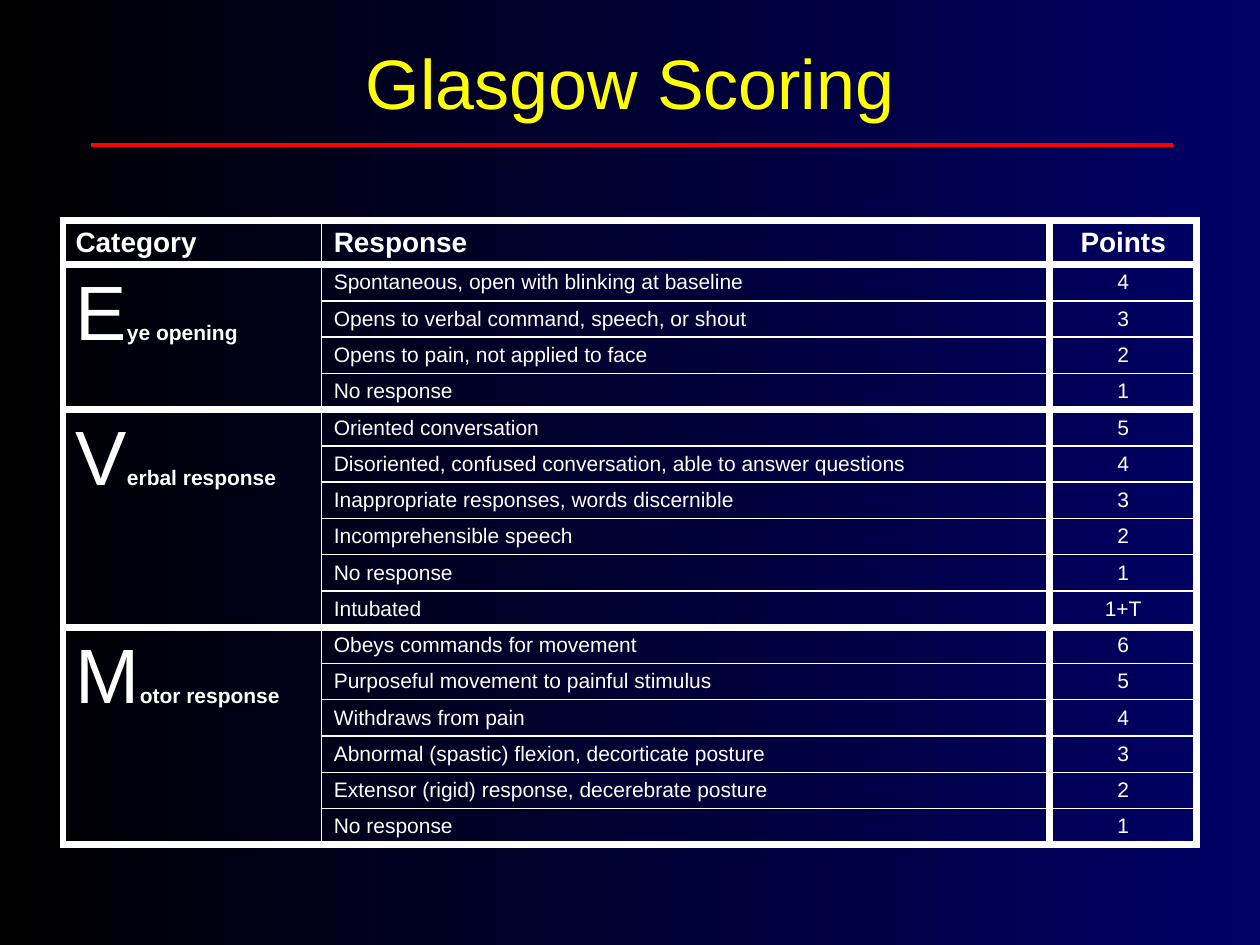
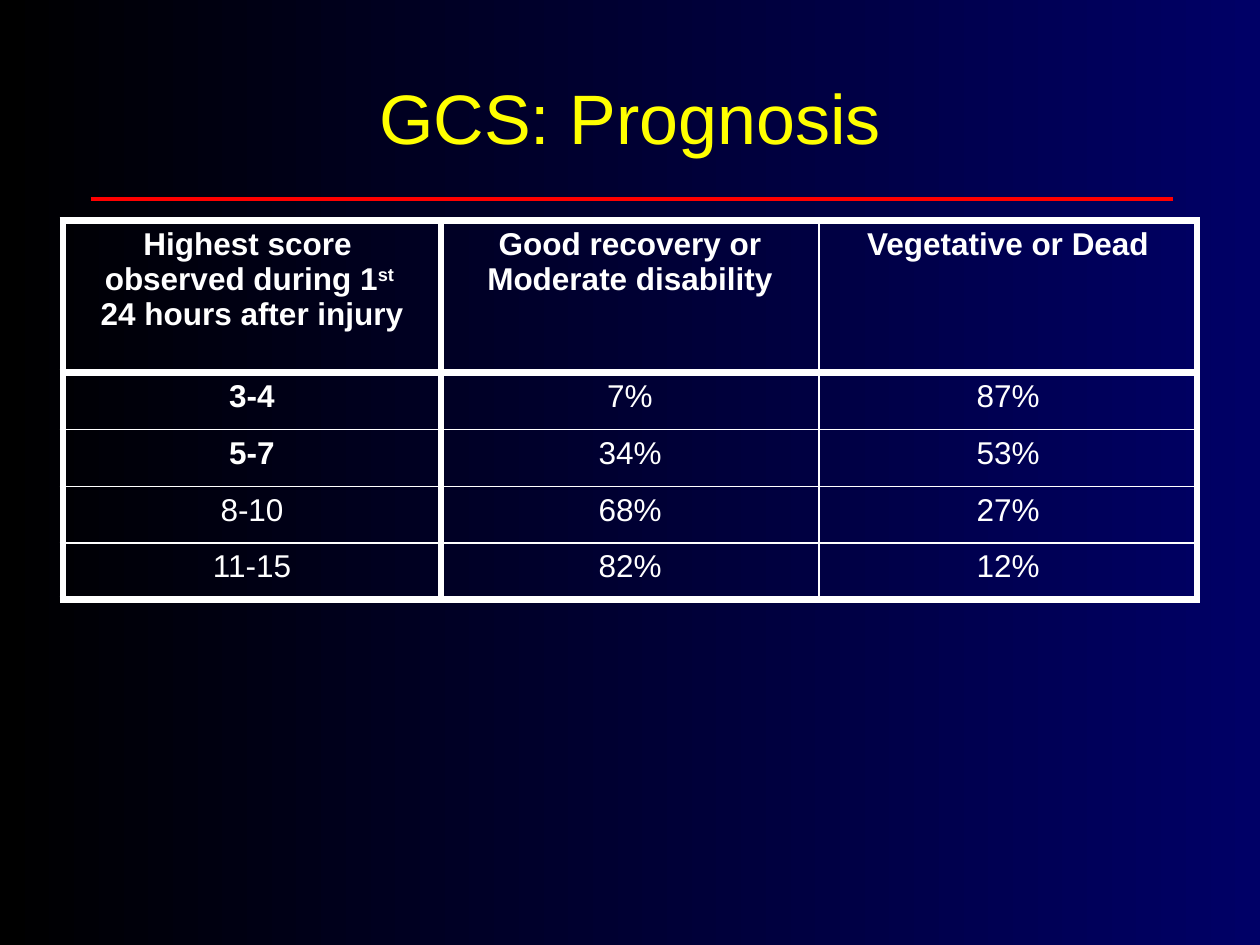
from lxml import etree
from pptx import Presentation
from pptx.dml.color import RGBColor
from pptx.enum.shapes import MSO_CONNECTOR
from pptx.enum.text import MSO_ANCHOR, PP_ALIGN
from pptx.oxml.ns import qn
from pptx.util import Inches, Pt

STRAIGHT = MSO_CONNECTOR.STRAIGHT
MIDDLE = MSO_ANCHOR.MIDDLE
LEFT, CENTER = PP_ALIGN.LEFT, PP_ALIGN.CENTER
BLACK = RGBColor(0x00, 0x00, 0x00)
NAVY = RGBColor(0x00, 0x00, 0x66)
YELLOW = RGBColor(0xFF, 0xFF, 0x00)
RED = RGBColor(0xFF, 0x00, 0x00)
WHITE = RGBColor(0xFF, 0xFF, 0xFF)
FONT = "Arial"
THIN, HEAVY = Pt(1), Pt(4.5)

SECTIONS = [
    ("Eye opening", [
        ("Spontaneous, open with blinking at baseline", "4"),
        ("Opens to verbal command, speech, or shout", "3"),
        ("Opens to pain, not applied to face", "2"),
        ("No response", "1"),
    ]),
    ("Verbal response", [
        ("Oriented conversation", "5"),
        ("Disoriented, confused conversation, able to answer questions", "4"),
        ("Inappropriate responses, words discernible", "3"),
        ("Incomprehensible speech", "2"),
        ("No response", "1"),
        ("Intubated", "1+T"),
    ]),
    ("Motor response", [
        ("Obeys commands for movement", "6"),
        ("Purposeful movement to painful stimulus", "5"),
        ("Withdraws from pain", "4"),
        ("Abnormal (spastic) flexion, decorticate posture", "3"),
        ("Extensor (rigid) response, decerebrate posture", "2"),
        ("No response", "1"),
    ]),
]
PROGNOSIS = [
    ("Highest score \nobserved during 1\n24 hours after injury",
     "Good recovery or\nModerate disability", "Vegetative or Dead"),
    ("3-4", "7%", "87%"),
    ("5-7", "34%", "53%"),
    ("8-10", "68%", "27%"),
    ("11-15", "82%", "12%"),
]


def add_table_slide(title_text, title_top, title_height, rule_y, rows, widths, heights):
    slide = presentation.slides.add_slide(presentation.slide_layouts[5])
    title = slide.shapes.title
    title.left, title.top = Inches(0.5), Inches(title_top)
    title.width, title.height = Inches(9), Inches(title_height)
    title.text_frame.text = title_text
    title.text_frame.vertical_anchor = MIDDLE
    paragraph = title.text_frame.paragraphs[0]
    paragraph.alignment = CENTER
    paragraph.font.name, paragraph.font.size = FONT, Pt(40)
    paragraph.font.color.rgb = YELLOW

    table = slide.shapes.add_table(
        len(rows), len(widths), Inches(0.5), Inches(1.75),
        Inches(sum(widths)), Inches(sum(heights))).table
    table.first_row = table.horz_banding = False
    for column, width in zip(table.columns, widths):
        column.width = Inches(width)
    for row, height, texts in zip(table.rows, heights, rows):
        row.height = Inches(height)
        for cell, text in zip(row.cells, texts):
            cell.text = text

    rule = slide.shapes.add_connector(
        STRAIGHT, Inches(0.72), Inches(rule_y), Inches(9.31), Inches(rule_y))
    rule.line.color.rgb, rule.line.width = RED, Pt(2)
    etree.SubElement(rule._element.spPr, qn("a:effectLst"))
    return table


def draw_borders(table, heavy_rows, heavy_columns):
    for r, row in enumerate(table.rows):
        for c, cell in enumerate(row.cells):
            properties = cell._tc.get_or_add_tcPr()
            edges = [
                ("L", c in heavy_columns),
                ("R", c + 1 in heavy_columns),
                ("T", r in heavy_rows),
                ("B", r + cell.span_height in heavy_rows),
            ]
            for side, heavy in edges:
                if cell.is_spanned and side in "TB" and not heavy:
                    continue
                width = HEAVY if heavy else THIN
                line = etree.SubElement(properties, qn(f"a:ln{side}"), w=str(width))
                fill = etree.SubElement(line, qn("a:solidFill"))
                etree.SubElement(fill, qn("a:srgbClr"), val=str(WHITE))
            cell.fill.background()


presentation = Presentation()
presentation.slide_width, presentation.slide_height = Inches(10), Inches(7.5)
background = presentation.slide_master.background.fill
background.gradient()
background.gradient_angle = 0
for stop, color, position in zip(background.gradient_stops, (BLACK, NAVY), (0, 1)):
    stop.color.rgb, stop.position = color, position

scoring_rows = [("Category", "Response", "Points")]
for category, responses in SECTIONS:
    scoring_rows += [("", response, points) for response, points in responses]
scoring = add_table_slide("Glasgow Scoring", 0.17, 0.95, 1.15, scoring_rows,
                          [2.05, 5.78, 1.17], [0.35] + [4.61 / 16] * 16)
for r, row in enumerate(scoring.rows):
    for cell, alignment in zip(row.cells, (LEFT, LEFT, CENTER)):
        paragraph = cell.text_frame.paragraphs[0]
        paragraph.alignment = alignment
        paragraph.font.name, paragraph.font.color.rgb = FONT, WHITE
        paragraph.font.size = Pt(12 if r else 16)
        paragraph.font.bold = r == 0

section_edges = [0, 1]
for category, responses in SECTIONS:
    first = section_edges[-1]
    after = first + len(responses)
    cell = scoring.cell(first, 0)
    cell.merge(scoring.cell(after - 1, 0))
    section_edges.append(after)
    paragraph = cell.text_frame.paragraphs[0]
    for text, size, bold in ((category[0], 44, False), (category[1:], 12, True)):
        run = paragraph.add_run()
        run.text = text
        run.font.name, run.font.color.rgb = FONT, WHITE
        run.font.size, run.font.bold = Pt(size), bold
draw_borders(scoring, section_edges, (0, 2, 3))

prognosis = add_table_slide("GCS: Prognosis", 0.3, 1.25, 1.58, PROGNOSIS,
                            [3, 3, 3], [1.21] + [0.45] * 4)
ordinal = prognosis.cell(0, 0).text_frame.paragraphs[1].add_run()
ordinal.text = "st "
ordinal._r.get_or_add_rPr().set("baseline", "30000")
for r, row in enumerate(prognosis.rows):
    for c, cell in enumerate(row.cells):
        for paragraph in cell.text_frame.paragraphs:
            paragraph.alignment = CENTER
            paragraph.font.name, paragraph.font.size = FONT, Pt(18)
            paragraph.font.color.rgb = WHITE
            paragraph.font.bold = r == 0 or (c == 0 and r < 3)
draw_borders(prognosis, (0, 1, 5), (0, 1, 3))

presentation.save("out.pptx")
